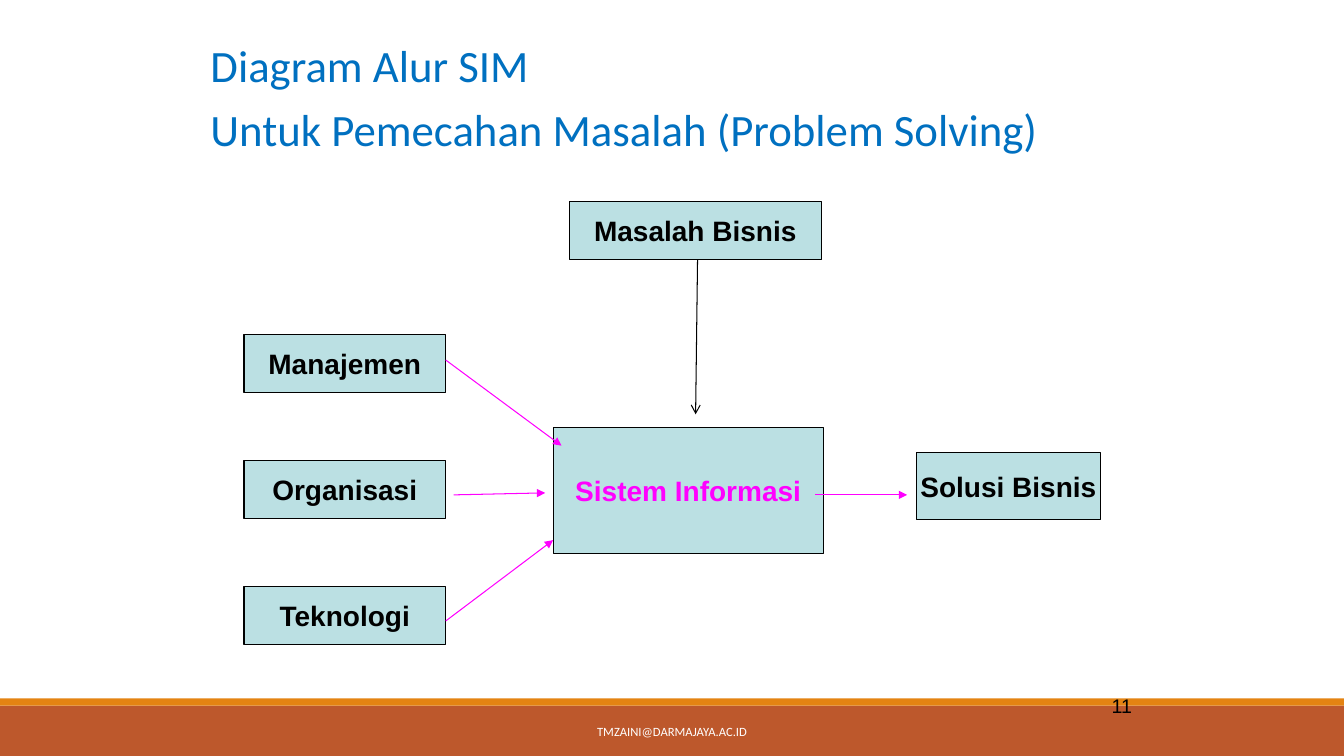
from dataclasses import dataclass

from lxml import etree
from pptx import Presentation
from pptx.dml.color import RGBColor
from pptx.enum.shapes import MSO_CONNECTOR, MSO_SHAPE
from pptx.enum.text import MSO_ANCHOR, MSO_AUTO_SIZE, PP_ALIGN
from pptx.oxml.ns import qn
from pptx.util import Cm, Pt

RECT = MSO_SHAPE.RECTANGLE
LINE = MSO_CONNECTOR.STRAIGHT
TOP, MIDDLE = MSO_ANCHOR.TOP, MSO_ANCHOR.MIDDLE
LEFT, CENTER, RIGHT = PP_ALIGN.LEFT, PP_ALIGN.CENTER, PP_ALIGN.RIGHT
FIXED = MSO_AUTO_SIZE.NONE

COLORS = {
    "black": "000000",
    "white": "FFFFFF",
    "blue": "0070C0",
    "pink": "FF00FF",
    "pale": "BBE0E3",
    "rust": "BD582C",
    "orange": "E48312",
}
WIDE, HIGH = 33.87, 19.05
STROKE = Pt(0.75)


@dataclass
class Box:
    text: str
    left: float
    top: float
    width: float
    height: float
    color: str = "black"


@dataclass
class Arrow:
    start: tuple[float, float]
    end: tuple[float, float]
    color: str = "pink"
    head: str = "triangle"


@dataclass
class Label(Box):
    size: int = 14
    font: str = "Arial"
    align: PP_ALIGN = CENTER
    anchor: MSO_ANCHOR = MIDDLE


INPUTS = ["Manajemen", "Organisasi", "Teknologi"]
BOXES = [
    Box("Masalah Bisnis", 14.35, 5.08, 6.35, 1.47),
    *(Box(name, 6.15, 8.43 + 3.175 * row, 5.08, 1.47)
      for row, name in enumerate(INPUTS)),
    Box("Sistem Informasi", 13.94, 10.77, 6.81, 3.18, "pink"),
    Box("Solusi Bisnis", 23.09, 11.4, 4.65, 1.7),
]
ARROWS = [
    Arrow((11.43, 12.47), (13.74, 12.42)),
    Arrow((20.55, 12.47), (22.86, 12.47)),
    Arrow((11.23, 9.07), (14.15, 11.23)),
    Arrow((11.23, 15.65), (13.94, 13.61)),
    Arrow((17.58, 6.53), (17.53, 10.44), "black", "arrow"),
]
BARS = [
    Box("", 0, 17.78, WIDE, 1.27, "rust"),
    Box("", 0, 17.6, WIDE, 0.18, "orange"),
]
TITLE = Label(
    "Diagram Alur SIM\vUntuk Pemecahan Masalah (Problem Solving)",
    5.05, 1.32, 30.12, 1.96, "blue", 32, "Calibri", LEFT,
)
LABELS = [
    Label("11", 23.5, 17.35, 5.28, 1.32, align=RIGHT, anchor=TOP),
    Label("TMZAINI@DARMAJAYA.AC.ID", 10.24, 17.93, 13.39, 1.02,
          "white", 9, "Calibri"),
]


def tint(name: str) -> RGBColor:
    """Return the named colour."""
    return RGBColor.from_string(COLORS[name])


def place(item: Box) -> tuple[Cm, Cm, Cm, Cm]:
    """Return the place and size of an item."""
    return Cm(item.left), Cm(item.top), Cm(item.width), Cm(item.height)


def write(shape, item: Label, bold: bool = False, wrap: bool = True) -> None:
    """Fill a shape with styled text."""
    frame = shape.text_frame
    frame.auto_size = FIXED
    frame.word_wrap = wrap
    frame.vertical_anchor = item.anchor
    para = frame.paragraphs[0]
    para.text = item.text
    para.alignment = item.align
    for run in para.runs:
        run.font.size = Pt(item.size)
        run.font.name = item.font
        run.font.bold = bold
        run.font.color.rgb = tint(item.color)


def add_rect(slide, item: Box, fill: str):
    """Add a flat filled rectangle without outline."""
    shape = slide.shapes.add_shape(RECT, *place(item))
    shape.shadow.inherit = False
    shape.fill.solid()
    shape.fill.fore_color.rgb = tint(fill)
    shape.line.fill.background()
    return shape


def add_box(slide, box: Box) -> None:
    """Add an outlined box of the flow."""
    shape = add_rect(slide, box, "pale")
    shape.line.color.rgb = tint("black")
    shape.line.width = STROKE
    label = Label(box.text, box.left, box.top, box.width, box.height,
                  box.color, 20)
    write(shape, label, bold=True, wrap=False)


def add_arrow(slide, arrow: Arrow) -> None:
    """Add an arrow of the flow."""
    points = [Cm(value) for value in arrow.start + arrow.end]
    link = slide.shapes.add_connector(LINE, *points)
    link.line.color.rgb = tint(arrow.color)
    link.line.width = STROKE
    props = link.element.spPr
    etree.SubElement(props.find(qn("a:ln")), qn("a:tailEnd"), type=arrow.head)
    etree.SubElement(props, qn("a:effectLst"))


def add_title(slide) -> None:
    """Move and style the title."""
    title = slide.shapes.title
    title.left, title.top, title.width, title.height = place(TITLE)
    write(title, TITLE)
    title.text_frame.paragraphs[0].line_spacing = Pt(45.7)


def main() -> None:
    """Build and save the slide."""
    deck = Presentation()
    deck.slide_width, deck.slide_height = Cm(WIDE), Cm(HIGH)
    slide = deck.slides.add_slide(deck.slide_layouts[5])
    for bar in BARS:
        add_rect(slide, bar, bar.color)
    add_title(slide)
    for box in BOXES:
        add_box(slide, box)
    for arrow in ARROWS:
        add_arrow(slide, arrow)
    for label in LABELS:
        write(slide.shapes.add_textbox(*place(label)), label)
    deck.save("out.pptx")


if __name__ == "__main__":
    main()
